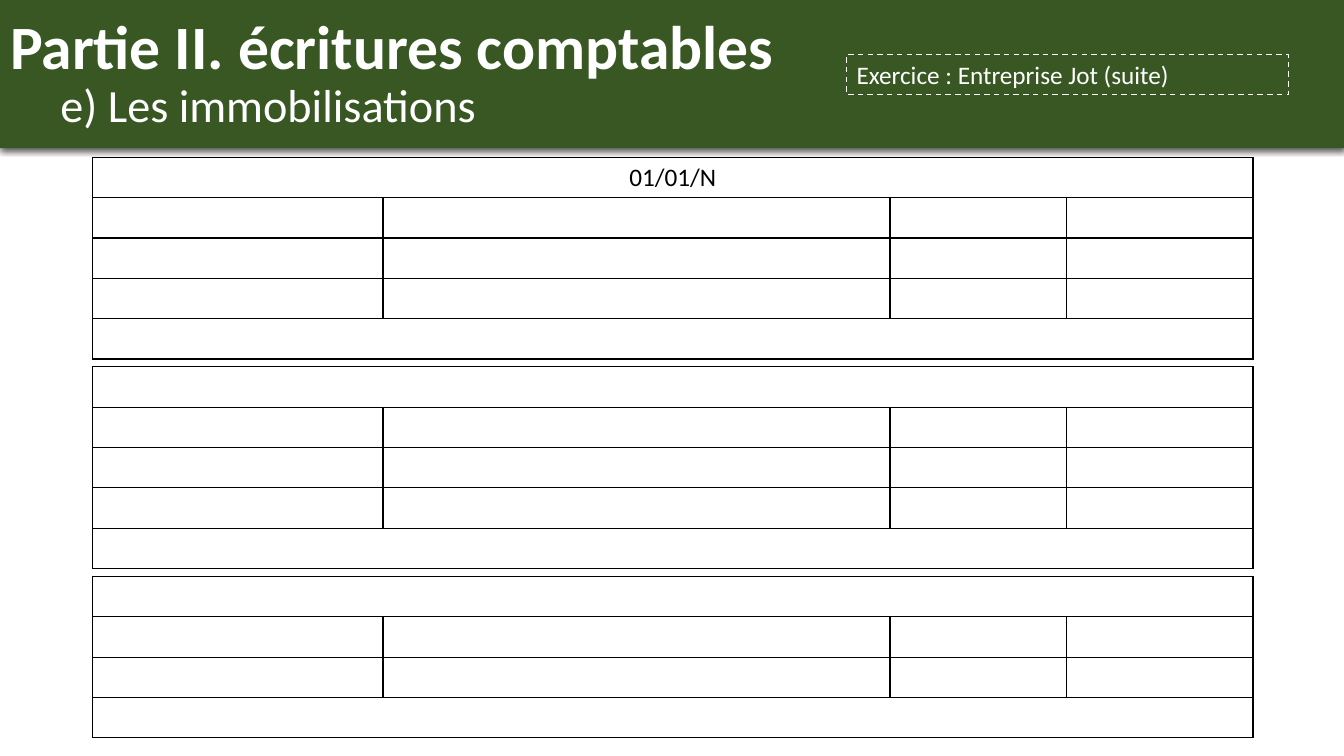
"""Draw a slide of blank journal entries for an accounting exercise."""
from dataclasses import dataclass

from lxml import etree
from pptx import Presentation
from pptx.dml.color import RGBColor
from pptx.enum.dml import MSO_LINE
from pptx.enum.text import MSO_ANCHOR, MSO_AUTO_SIZE, PP_ALIGN
from pptx.oxml import parse_xml
from pptx.oxml.ns import nsdecls, qn
from pptx.util import Inches, Length, Pt

GREEN = RGBColor(0x38, 0x57, 0x23)
WHITE = RGBColor(0xFF, 0xFF, 0xFF)
BLACK = RGBColor(0x00, 0x00, 0x00)
FONT = "Calibri"
DASH = MSO_LINE.DASH
MIDDLE = MSO_ANCHOR.MIDDLE
FIXED = MSO_AUTO_SIZE.NONE
GROW = MSO_AUTO_SIZE.SHAPE_TO_FIT_TEXT
LEFT, CENTER = PP_ALIGN.LEFT, PP_ALIGN.CENTER

WIDTH, HEIGHT = Inches(13.33), Inches(7.5)
COLS = (7.05, 14.55, 6.45, 31.28, 13.13, 13.88)
PAIRS = ((0, 1), (2, 3))
EDGE, TOP, ROW, GAP = 6.9, 20.8, 5.33, 1.07


@dataclass
class Entry:
    """One journal entry: its date and its number of rows."""
    date: str
    rows: int


ENTRIES = (Entry("01/01/N", 5), Entry("", 5), Entry("", 4))


def across(share: float) -> Length:
    """Turn a percentage of the slide's width into a length."""
    return Length(round(WIDTH * share / 100))


def down(share: float) -> Length:
    """Turn a percentage of the slide's height into a length."""
    return Length(round(HEIGHT * share / 100))


def write(para, text: str, *, size: float = 18, color: RGBColor = WHITE,
          bold: bool = False, align: PP_ALIGN = LEFT) -> None:
    """Add a run of text to a paragraph."""
    para.alignment = align
    run = para.add_run()
    run.text = text
    font = run.font
    font.name, font.size, font.bold = FONT, Pt(size), bold
    font.color.rgb = color


def shade(shape) -> None:
    """Cast a soft shadow below a shape."""
    shape.shadow.inherit = False
    effects = shape._element.spPr.find(qn("a:effectLst"))
    effects.append(parse_xml(
        f'<a:outerShdw {nsdecls("a")} blurRad="{Pt(4.5)}" dist="{Pt(1.5)}" '
        'dir="5400000" algn="t" rotWithShape="0"><a:srgbClr val="000000">'
        '<a:alpha val="63000"/></a:srgbClr></a:outerShdw>'))


def frame(cell) -> None:
    """Give a cell thin black borders and no fill."""
    props = cell._tc.get_or_add_tcPr()
    for side in ("lnL", "lnR", "lnT", "lnB"):
        line = etree.SubElement(props, qn(f"a:{side}"), w=str(Pt(1)))
        solid = etree.SubElement(line, qn("a:solidFill"))
        etree.SubElement(solid, qn("a:srgbClr"), val=str(BLACK))
    cell.fill.background()


def banner(slide) -> None:
    """Fill the title with the part and its section."""
    title = slide.shapes.title
    title.left, title.top = across(0), down(0)
    title.width, title.height = across(100), down(19.6)
    title.fill.solid()
    title.fill.fore_color.rgb = GREEN
    title.line.fill.background()
    shade(title)
    body = title.text_frame
    body.word_wrap, body.auto_size = True, FIXED
    body.vertical_anchor = MIDDLE
    para = body.paragraphs[0]
    para.line_spacing = 0.9
    write(para, "Partie II. écritures comptables", size=44, bold=True)
    para.add_line_break()
    write(para, "\te) Les immobilisations", size=33)


def label(slide) -> None:
    """Add the dashed box that names the exercise."""
    box = slide.shapes.add_textbox(
        across(63), down(7.2), across(32.86), down(ROW))
    box.line.color.rgb = WHITE
    box.line.width = Pt(1)
    box.line.dash_style = DASH
    body = box.text_frame
    body.word_wrap, body.auto_size = True, GROW
    write(body.paragraphs[0], "Exercice : Entreprise Jot (suite)")


def journal(slide, entry: Entry, top: float) -> None:
    """Add the table of one journal entry."""
    last = entry.rows - 1
    table = slide.shapes.add_table(
        entry.rows, len(COLS), across(EDGE), down(top),
        across(sum(COLS)), down(ROW * entry.rows)).table
    table.first_row = table.horz_banding = False
    for col, share in zip(table.columns, COLS):
        col.width = across(share)
    for cell in table.iter_cells():
        frame(cell)
    for row in range(entry.rows):
        spans = ((0, len(COLS) - 1),) if row in (0, last) else PAIRS
        for start, end in spans:
            table.cell(row, start).merge(table.cell(row, end))
    if entry.date:
        para = table.cell(0, 0).text_frame.paragraphs[0]
        write(para, entry.date, color=BLACK, align=CENTER)


def main() -> None:
    """Build the slide and save it."""
    deck = Presentation()
    deck.slide_width, deck.slide_height = WIDTH, HEIGHT
    slide = deck.slides.add_slide(deck.slide_layouts[5])
    banner(slide)
    label(slide)
    top = TOP
    for entry in ENTRIES:
        journal(slide, entry, top)
        top += entry.rows * ROW + GAP
    deck.save("out.pptx")


if __name__ == "__main__":
    main()
